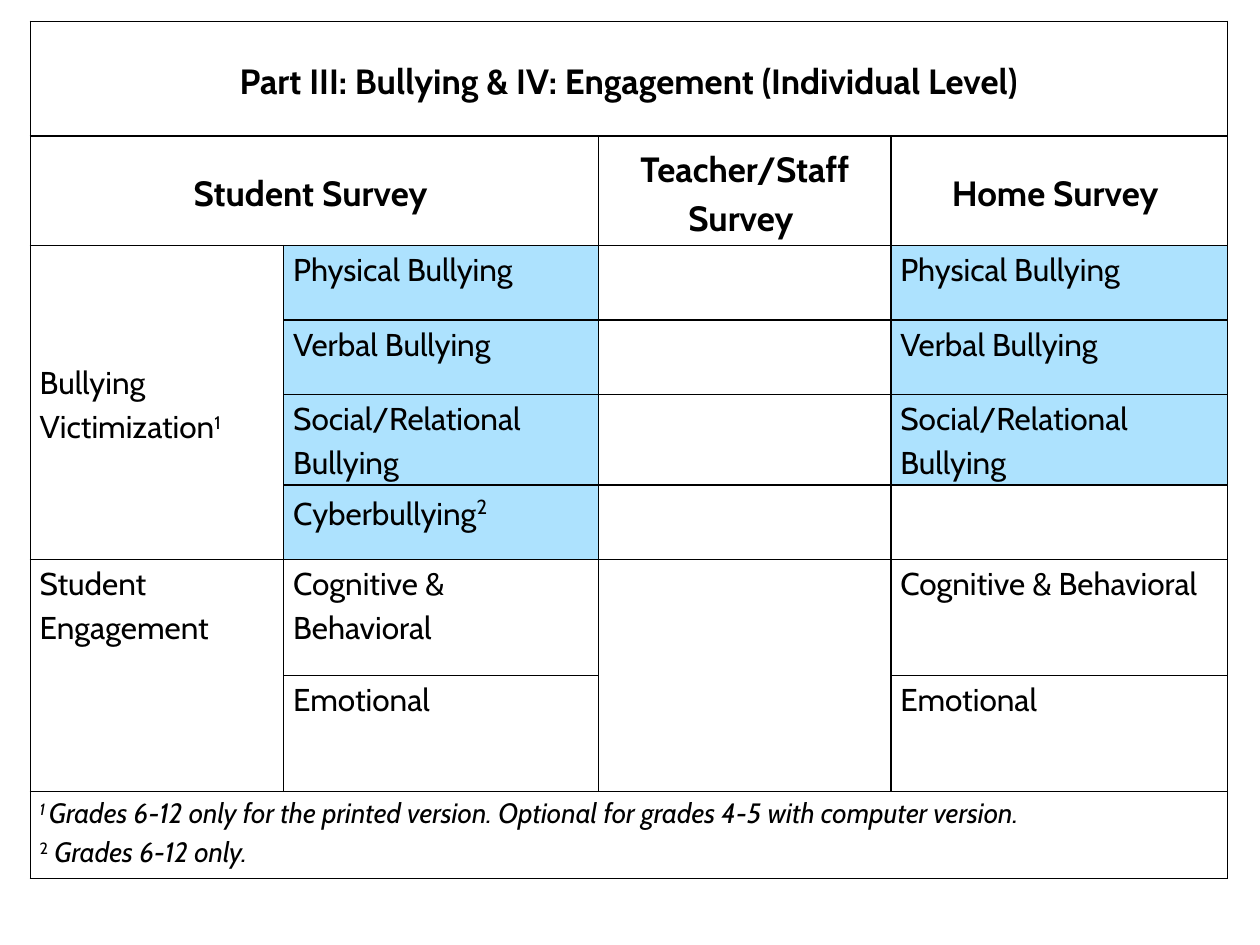
from dataclasses import dataclass
from typing import Optional

from lxml import etree
from pptx import Presentation
from pptx import util as u
from pptx.dml.color import RGBColor
from pptx.enum import text
from pptx.oxml.ns import qn


@dataclass(frozen=True)
class Theme:
    font: str = "Cabin"
    ink: str = "000000"
    paper: str = "FFFFFF"
    highlight: str = "ADE2FE"
    heading_size: int = 20
    body_size: int = 18
    note_size: int = 16
    border_width: int = 1
    line_spacing: float = 1.15


@dataclass(frozen=True)
class Piece:
    """A stretch of text within a paragraph."""
    words: str
    raised: bool = False
    italic: bool = False
    size: Optional[int] = None


@dataclass(frozen=True)
class Entry:
    """A filled-in cell, with the rows and columns it spans."""
    row: int
    col: int
    paragraphs: tuple = ()
    rows: int = 1
    cols: int = 1
    fill: Optional[str] = None
    heading: bool = False
    middle: bool = False
    size: int = 18


THEME = Theme()
COLUMN_WIDTHS = (5.11, 6.35, 5.89, 6.78)
ROW_HEIGHTS = (2.31, 2.21, 1.5, 1.5, 1.83, 1.5, 2.34, 2.34, 1.75)
STUDENT, HOME = 1, 3
FIRST_BULLYING_ROW, FIRST_ENGAGEMENT_ROW = 2, 6
BULLYING = ("Physical Bullying", "Verbal Bullying", "Social/Relational Bullying")
ENGAGEMENT = ("Cognitive & Behavioral", "Emotional")


def plain(words: str) -> tuple:
    return ((Piece(words),),)


def heading(row: int, col: int, words: str, cols: int = 1) -> Entry:
    return Entry(row, col, plain(words), cols=cols, fill=THEME.paper,
                 heading=True, middle=True, size=THEME.heading_size)


def survey_entries() -> list[Entry]:
    entries = [
        heading(0, 0, "Part III: Bullying & IV: Engagement (Individual Level)", cols=4),
        heading(1, 0, "Student Survey ", cols=2),
        heading(1, 2, "Teacher/Staff Survey "),
        heading(1, 3, "Home Survey "),
        Entry(2, 0, ((Piece("Bullying Victimization"), Piece("1", raised=True)),),
              rows=4, fill=THEME.paper, middle=True),
        Entry(5, STUDENT, ((Piece("Cyberbullying"),
                            Piece("2", raised=True, size=THEME.heading_size)),),
              fill=THEME.highlight),
        Entry(6, 0, plain("Student Engagement"), rows=2, fill=THEME.paper),
        Entry(6, 2, rows=2),
        Entry(8, 0, (
            (Piece("1 ", raised=True, italic=True),
             Piece("Grades 6-12 only for the printed version. "
                   "Optional for grades 4-5 with computer version.", italic=True)),
            (Piece("2", raised=True), Piece(" Grades 6-12 only.", italic=True)),
        ), cols=4, fill=THEME.paper, size=THEME.note_size),
    ]
    # Topics shared by the student and home surveys
    for col in (STUDENT, HOME):
        for row, topic in enumerate(BULLYING, FIRST_BULLYING_ROW):
            entries.append(Entry(row, col, plain(topic), fill=THEME.highlight))
        for row, topic in enumerate(ENGAGEMENT, FIRST_ENGAGEMENT_ROW):
            entries.append(Entry(row, col, plain(topic)))
    return entries


def style_font(font, size: int, bold: bool) -> None:
    font.name = THEME.font
    font.size = u.Pt(size)
    font.bold = bold
    font.color.rgb = RGBColor.from_string(THEME.ink)


def draw_borders(cell) -> None:
    properties = cell._tc.get_or_add_tcPr()
    for side in ("lnL", "lnR", "lnT", "lnB"):
        line = etree.SubElement(properties, qn(f"a:{side}"),
                                w=str(u.Pt(THEME.border_width)))
        solid = etree.SubElement(line, qn("a:solidFill"))
        etree.SubElement(solid, qn("a:srgbClr"), val=THEME.ink)


def paint(cell, colour: Optional[str]) -> None:
    if colour is None:
        cell.fill.background()
    else:
        cell.fill.solid()
        cell.fill.fore_color.rgb = RGBColor.from_string(colour)


def write_paragraph(paragraph, pieces: tuple, entry: Entry) -> None:
    paragraph.line_spacing = THEME.line_spacing
    if entry.heading:
        paragraph.alignment = text.PP_ALIGN.CENTER
        paragraph.space_after = u.Pt(10)
    style_font(paragraph.font, entry.size, entry.heading)
    for piece in pieces:
        run = paragraph.add_run()
        run.text = piece.words
        style_font(run.font, piece.size or entry.size, entry.heading)
        run.font.italic = piece.italic
        if piece.raised:
            run._r.get_or_add_rPr().set("baseline", "30000")


def write_entry(table, entry: Entry) -> None:
    cell = table.cell(entry.row, entry.col)
    if entry.rows > 1 or entry.cols > 1:
        cell.merge(table.cell(entry.row + entry.rows - 1, entry.col + entry.cols - 1))
    paint(cell, entry.fill)
    cell.margin_left = cell.margin_right = u.Cm(0.08 if entry.heading else 0.19)
    cell.margin_top = u.Cm(0.02 if entry.heading else 0)
    cell.margin_bottom = 0
    cell.vertical_anchor = (text.MSO_ANCHOR.MIDDLE if entry.middle
                            else text.MSO_ANCHOR.TOP)
    frame = cell.text_frame
    for index, pieces in enumerate(entry.paragraphs):
        paragraph = frame.add_paragraph() if index else frame.paragraphs[0]
        write_paragraph(paragraph, pieces, entry)


def main() -> None:
    deck = Presentation()
    deck.slide_width, deck.slide_height = u.Cm(25.4), u.Cm(19.05)
    slide = deck.slides.add_slide(deck.slide_layouts[6])

    # Table grid
    table = slide.shapes.add_table(
        len(ROW_HEIGHTS), len(COLUMN_WIDTHS), u.Cm(0.61), u.Cm(0.43),
        u.Cm(sum(COLUMN_WIDTHS)), u.Cm(sum(ROW_HEIGHTS))).table
    table.first_row = table.horz_banding = False
    for column, width in zip(table.columns, COLUMN_WIDTHS):
        column.width = u.Cm(width)
    for row, height in zip(table.rows, ROW_HEIGHTS):
        row.height = u.Cm(height)
    for cell in table.iter_cells():
        draw_borders(cell)
        paint(cell, THEME.paper)

    # Survey contents
    for entry in survey_entries():
        write_entry(table, entry)

    deck.save("out.pptx")


if __name__ == "__main__":
    main()
